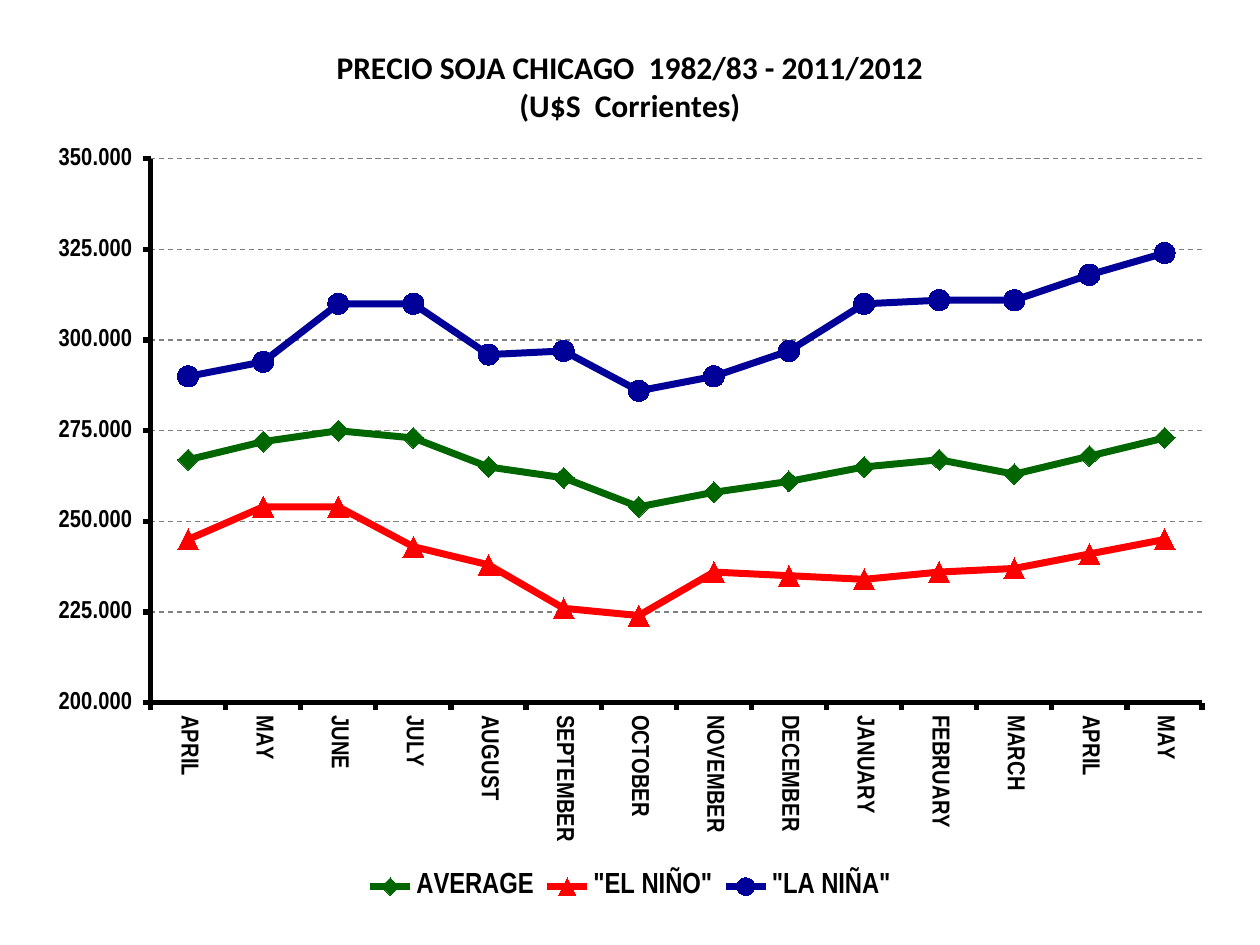
"""Build a slide with a line chart of Chicago soybean prices by month."""
import dataclasses

import pptx
import pptx.chart.data
import pptx.dml.color
import pptx.enum.chart
import pptx.enum.dml
import pptx.oxml
import pptx.oxml.ns
import pptx.util

MONTHS = ["APRIL", "MAY", "JUNE", "JULY", "AUGUST", "SEPTEMBER", "OCTOBER",
          "NOVEMBER", "DECEMBER", "JANUARY", "FEBRUARY", "MARCH", "APRIL", "MAY"]
PRICES = {
    "AVERAGE": [267, 272, 275, 273, 265, 262, 254, 258, 261, 265, 267, 263, 268, 273],
    '"EL NIÑO"': [245, 254, 254, 243, 238, 226, 224, 236, 235, 234, 236, 237, 241, 245],
    '"LA NIÑA"': [290, 294, 310, 310, 296, 297, 286, 290, 297, 310, 311, 311, 318, 324],
}
TITLE = ["PRECIO SOJA CHICAGO  1982/83 - 2011/2012", "(U$S  Corrientes)"]


@dataclasses.dataclass(frozen=True)
class Theme:
    """Colours, fonts and sizes of the slide."""
    ink: str = "000000"
    grid: str = "808080"
    series: tuple = ("006600", "FF0000", "000099")
    markers: tuple = ("DIAMOND", "TRIANGLE", "CIRCLE")
    title_font: str = "Calibri"
    label_font: str = "Arial Narrow"
    title_size: float = 18
    label_size: float = 14
    legend_size: float = 16.6
    axis_width: float = 3
    series_width: float = 4
    grid_width: float = 0.75
    marker_size: int = 12


class Painter:
    """Draws styled chart elements on the current page."""

    def __init__(self, theme, page):
        self.theme = theme
        self.page = page

    @staticmethod
    def px(length):
        """Turn pixels into EMU."""
        return pptx.util.Emu(round(length * 914400 / 126))

    def font(self, font, name, size):
        """Apply a bold face in the ink colour."""
        font.name = name
        font.size = pptx.util.Pt(size)
        font.bold = True
        font.color.rgb = pptx.dml.color.RGBColor.from_string(self.theme.ink)

    def line(self, line, color, width):
        """Apply a solid line."""
        line.color.rgb = pptx.dml.color.RGBColor.from_string(color)
        line.width = pptx.util.Pt(width)

    def place(self, element, index, **fractions):
        """Give a chart part a manual layout in fractions of the chart."""
        for old in element.findall(pptx.oxml.ns.qn("c:layout")):
            element.remove(old)
        inner = '<c:layoutTarget val="inner"/>' if index == 0 else ""
        modes = "".join(f'<c:{key}Mode val="edge"/>' for key in "xy")
        values = "".join(f'<c:{key} val="{value}"/>' for key, value in fractions.items())
        element.insert(index, pptx.oxml.parse_xml(
            f'<c:layout {pptx.oxml.ns.nsdecls("c")}><c:manualLayout>'
            f'{inner}{modes}{values}</c:manualLayout></c:layout>'))

    def chart(self, left, top, width, height):
        """Add the line chart with its data."""
        data = pptx.chart.data.CategoryChartData()
        data.categories = MONTHS
        for name, values in PRICES.items():
            data.add_series(name, values)
        frame = self.page.shapes.add_chart(
            pptx.enum.chart.XL_CHART_TYPE.LINE_MARKERS,
            *map(self.px, (left, top, width, height)), data)
        chart = frame.chart
        chart.font.name = self.theme.title_font
        chart.font.size = pptx.util.Pt(10)
        chart.plots[0].vary_by_categories = False
        self.place(chart.plots[0]._element.getparent(), 0, x=0.097, y=0.16, w=0.883, h=0.609)
        return chart

    def title(self, chart, lines):
        """Write the chart title, one paragraph per line."""
        chart.has_title = True
        frame = chart.chart_title.text_frame
        for index, text in enumerate(lines):
            para = frame.paragraphs[0] if index == 0 else frame.add_paragraph()
            span = para.add_run()
            span.text = text
            self.font(span.font, self.theme.title_font, self.theme.title_size)
        chart.chart_title.include_in_layout = False
        self.place(chart.chart_title._element, 1, x=0.25, y=0.03)

    def axis(self, axis):
        """Style an axis line, its ticks and its labels."""
        axis.major_tick_mark = pptx.enum.chart.XL_TICK_MARK.OUTSIDE
        axis.minor_tick_mark = pptx.enum.chart.XL_TICK_MARK.NONE
        self.line(axis.format.line, self.theme.ink, self.theme.axis_width)
        self.font(axis.tick_labels.font, self.theme.label_font, self.theme.label_size)

    def month_axis(self, axis):
        """Turn the month labels a quarter clockwise."""
        self.axis(axis)
        body = axis._element.find(".//" + pptx.oxml.ns.qn("a:bodyPr"))
        body.set("rot", "5400000")
        body.set("vert", "horz")

    def price_axis(self, axis):
        """Set the price scale and dashed gridlines."""
        self.axis(axis)
        axis.minimum_scale, axis.maximum_scale, axis.major_unit = 200, 350, 25
        axis.tick_labels.number_format = "#,##0.000_ ;[Red]\\-#,##0.000\\ "
        axis.tick_labels.number_format_is_linked = False
        axis.has_major_gridlines = True
        grid = axis.major_gridlines.format.line
        self.line(grid, self.theme.grid, self.theme.grid_width)
        grid.dash_style = pptx.enum.dml.MSO_LINE.DASH

    def series(self, series, color, marker):
        """Style one price line and its markers."""
        series.smooth = False
        self.line(series.format.line, color, self.theme.series_width)
        series.marker.style = pptx.enum.chart.XL_MARKER_STYLE[marker]
        series.marker.size = self.theme.marker_size
        series.marker.format.fill.solid()
        series.marker.format.fill.fore_color.rgb = pptx.dml.color.RGBColor.from_string(color)
        self.line(series.marker.format.line, color, self.theme.grid_width)

    def legend(self, chart):
        """Add the legend under the plot."""
        chart.has_legend = True
        chart.legend.position = pptx.enum.chart.XL_LEGEND_POSITION.BOTTOM
        chart.legend.include_in_layout = False
        self.font(chart.legend.font, self.theme.label_font, self.theme.legend_size)
        self.place(chart.legend._element, 1, x=0.27, y=0.95, w=0.46, h=0.05)


def main():
    """Build and save the deck."""
    theme = Theme()
    deck = pptx.Presentation()
    deck.slide_width = Painter.px(1260)
    deck.slide_height = Painter.px(945)
    painter = Painter(theme, deck.slides.add_slide(deck.slide_layouts[6]))
    chart = painter.chart(35, 16, 1191, 893)
    painter.title(chart, TITLE)
    painter.month_axis(chart.category_axis)
    painter.price_axis(chart.value_axis)
    for series, color, marker in zip(chart.plots[0].series, theme.series, theme.markers):
        painter.series(series, color, marker)
    painter.legend(chart)
    deck.save("out.pptx")


if __name__ == "__main__":
    main()
